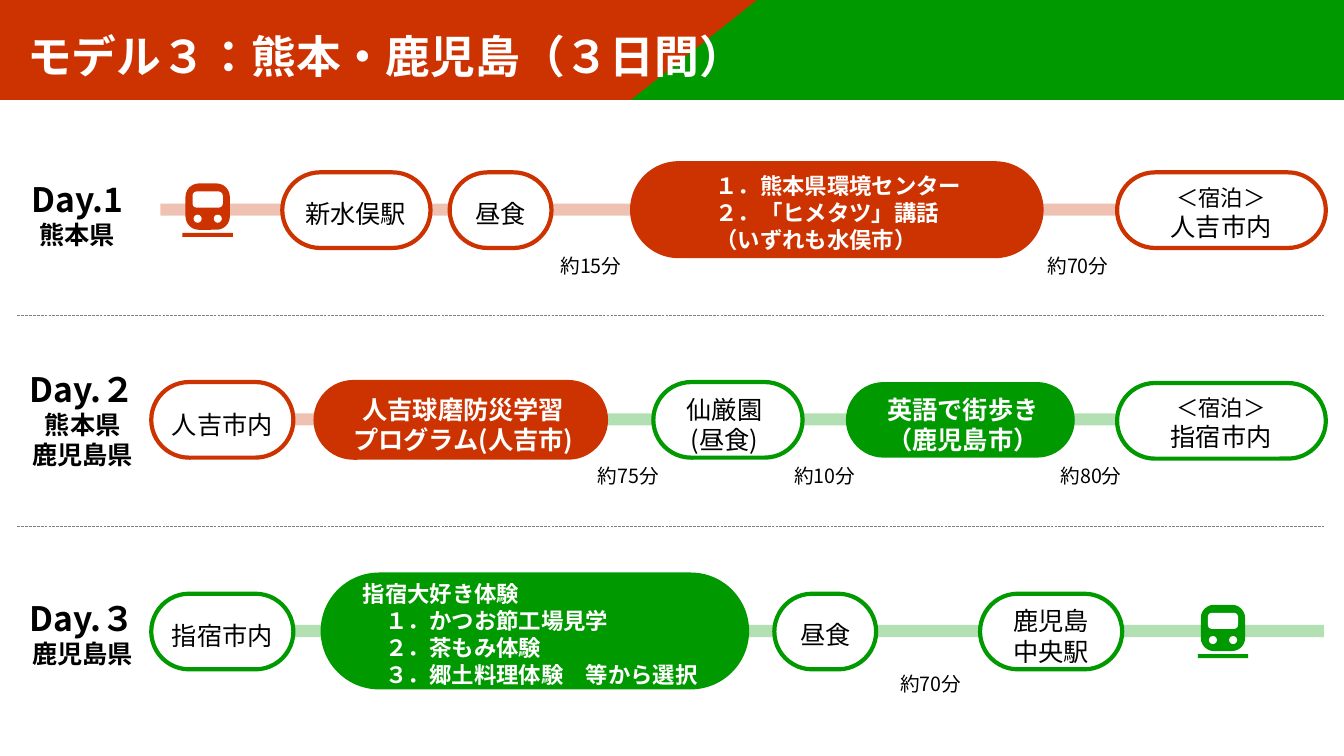
from lxml import etree
from pptx import Presentation
from pptx.dml.color import RGBColor
from pptx.enum.dml import MSO_LINE
from pptx.enum.lang import MSO_LANGUAGE_ID
from pptx.enum.shapes import MSO_CONNECTOR, MSO_SHAPE
from pptx.enum.text import MSO_AUTO_SIZE, PP_ALIGN
from pptx.oxml.ns import qn
from pptx.util import Emu, Pt

PX = 9144  # 100 px to the inch
FONT = "Noto Sans CJK JP"
RED = RGBColor(0xCC, 0x33, 0x00)
GREEN = RGBColor(0x00, 0x99, 0x00)
WHITE = RGBColor(0xFF, 0xFF, 0xFF)
BLACK = RGBColor(0x00, 0x00, 0x00)
GRAY = RGBColor(0x80, 0x80, 0x80)
RECT, ROUND, TRAPEZOID = MSO_SHAPE.RECTANGLE, MSO_SHAPE.ROUNDED_RECTANGLE, MSO_SHAPE.TRAPEZOID
OVAL = MSO_SHAPE.OVAL
STRAIGHT = MSO_CONNECTOR.STRAIGHT
LONG_DASH = MSO_LINE.LONG_DASH
JAPANESE = MSO_LANGUAGE_ID.JAPANESE
FIT = MSO_AUTO_SIZE.SHAPE_TO_FIT_TEXT
LEFT, CENTER = PP_ALIGN.LEFT, PP_ALIGN.CENTER

# left, top, width, colour
TRACKS = [(209, 620, 1104, GREEN), (582, 410, 624, GREEN),
          (159, 202, 1127, RED), (231, 410, 354, RED)]

# pill box, colour, text box, lines of (text, size)
PLAIN_STOPS = [
    ((280, 171, 147, 75), RED, (292, 192, 121, 40), [("新水俣駅", 18)]),
    ((446, 171, 101, 75), RED, (461, 192, 71, 40), [("昼食", 18)]),
    ((1108, 171, 207, 75), RED, (1120, 178, 182, 67), [("＜宿泊＞", 16), ("人吉市内", 18)]),
    ((150, 379, 141, 75), RED, (160, 401, 121, 40), [("人吉市内", 18)]),
    ((648, 379, 148, 75), GREEN, (653, 386, 131, 71), [("仙厳園", 18), ("(昼食)", 18)]),
    ((1108, 380, 207, 75), GREEN, (1120, 386, 182, 67), [("＜宿泊＞", 16), ("指宿市内", 18)]),
    ((150, 589, 141, 75), GREEN, (160, 610, 121, 40), [("指宿市内", 18)]),
    ((768, 589, 101, 75), GREEN, (783, 609, 71, 40), [("昼食", 18)]),
    ((972, 589, 141, 75), GREEN, (992, 596, 101, 71), [("鹿児島中央駅", 18)]),
]

# pill box, colour, outline, text box, lines, alignment, indent after the first line
PROGRAMMES = [
    ((627, 162, 406, 92), RED, RED, (700, 166, 273, 91),
     [("１．熊本県環境センター", 16), ("２．「ヒメタツ」講話", 16), ("（いずれも水俣市）", 16)], LEFT, 0),
    ((313, 379, 288, 75), RED, RED, (323, 386, 273, 71),
     [("人吉球磨防災学習", 18), ("プログラム(人吉市)", 18)], CENTER, 0),
    ((839, 379, 227, 75), GREEN, None, (862, 386, 186, 71),
     [("英語で街歩き", 18), ("（鹿児島市）", 18)], CENTER, 0),
    ((318, 568, 425, 116), GREEN, None, (350, 571, 389, 118),
     [("指宿大好き体験", 16), ("１．かつお節工場見学", 16), ("２．茶もみ体験", 16),
      ("３．郷土料理体験　等から選択", 16)], LEFT, 22),
]

DAYS = [
    ((17, 173, 119, 81), [("Day.1", 24), ("熊本県", 18)]),
    ((17, 361, 130, 111), [("Day.２", 24), ("熊本県", 18), ("鹿児島県", 18)]),
    ((17, 588, 130, 81), [("Day.３", 24), ("鹿児島県", 18)]),
]

TRAVEL_TIMES = [(546, 247, "約15分"), (1029, 247, "約70分"), (583, 455, "約75分"),
                (778, 455, "約10分"), (1042, 455, "約80分"), (883, 662, "約70分")]

TRAINS = [(184, 182, RED), (1191, 600, GREEN)]


class Itinerary:
    def __init__(self, slide):
        self.shapes = slide.shapes

    def shape(self, kind, box, fill, line=None, adj=None, alpha=None):
        """Draw a preset shape; alpha is the opacity in percent."""
        sp = self.shapes.add_shape(kind, *(Emu(v * PX) for v in box))
        sp.shadow.inherit = False
        sp.fill.solid()
        sp.fill.fore_color.rgb = fill
        if line is None:
            sp.line.fill.background()
        else:
            sp.line.color.rgb = line
            sp.line.width = Pt(3)
        if adj is not None:
            sp.adjustments[0] = adj
        if alpha is not None:
            color = sp._element.spPr.find(qn("a:solidFill")).find(qn("a:srgbClr"))
            etree.SubElement(color, qn("a:alpha")).set("val", str(alpha * 1000))

    def text(self, box, lines, color=BLACK, bold=False, align=CENTER, indent=0):
        """Write (text, size) lines, indenting all but the first."""
        sp = self.shapes.add_textbox(*(Emu(v * PX) for v in box))
        tf = sp.text_frame
        tf.word_wrap = True
        tf.auto_size = FIT
        for i, (words, size) in enumerate(lines):
            p = tf.add_paragraph() if i else tf.paragraphs[0]
            r = p.add_run()
            r.text = words
            r.font.language_id = JAPANESE
            p.alignment = align
            if i and indent:
                p._p.get_or_add_pPr().set("marL", str(indent * PX))
            p.font.name = FONT
            p.font.size = Pt(size)
            p.font.bold = bold
            p.font.color.rgb = color
            props = p._p.pPr.find(qn("a:defRPr"))
            etree.SubElement(props, qn("a:ea")).set("typeface", FONT)

    def pill(self, box, fill, line):
        self.shape(ROUND, box, fill, line, adj=0.5)

    def train(self, left, top, color):
        """Draw the front of a train: body, windscreen, two lamps and a rail."""
        self.shape(ROUND, (left, top, 44, 46), color, adj=0.3)
        self.shape(ROUND, (left + 7, top + 8, 30, 16), WHITE, adj=0.25)
        for x in (8, 28):
            self.shape(OVAL, (left + x, top + 31, 8, 8), WHITE)
        self.shape(RECT, (left - 3, top + 49, 50, 4), color)

    def divider(self, y):
        s = self.shapes.add_connector(STRAIGHT, *(Emu(v * PX) for v in (17, y, 1313, y)))
        s.line.color.rgb = GRAY
        s.line.width = Pt(0.25)
        s.line.dash_style = LONG_DASH
        etree.SubElement(s._element.spPr, qn("a:effectLst"))


def main():
    prs = Presentation()
    prs.slide_width, prs.slide_height = Emu(1333 * PX), Emu(750 * PX)
    plan = Itinerary(prs.slides.add_slide(prs.slide_layouts[6]))

    plan.shape(RECT, (0, 0, 1333, 99), RED)
    plan.shape(TRAPEZOID, (626, 0, 985, 99), GREEN, adj=1.262)
    plan.text((17, 24, 738, 64), [("モデル３：熊本・鹿児島（３日間）", 32)], WHITE, True, LEFT)

    for left, top, width, color in TRACKS:
        plan.shape(RECT, (left, top, width, 12), color, alpha=30)
    for pill, color, box, lines in PLAIN_STOPS:
        plan.pill(pill, WHITE, color)
        plan.text(box, lines)
    for pill, color, outline, box, lines, align, indent in PROGRAMMES:
        plan.pill(pill, color, outline)
        plan.text(box, lines, WHITE, True, align, indent)
    for box, lines in DAYS:
        plan.text(box, lines, bold=True)
    for left, top, color in TRAINS:
        plan.train(left, top, color)
    for left, top, words in TRAVEL_TIMES:
        plan.text((left, top, 84, 34), [(words, 14)], align=LEFT)
    for y in (313, 522):
        plan.divider(y)

    prs.save("out.pptx")


if __name__ == "__main__":
    main()
